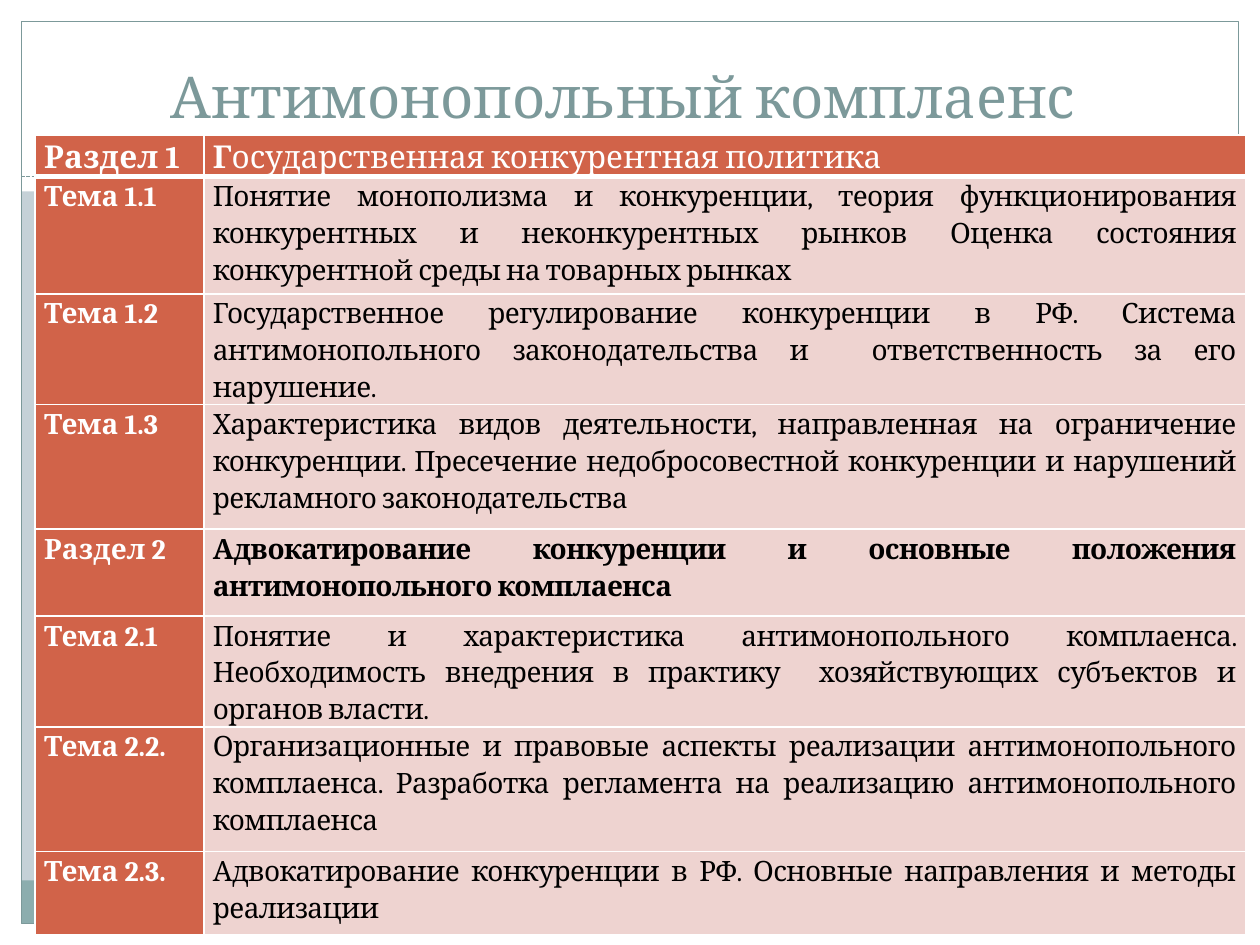
from lxml.etree import SubElement
from pptx import Presentation
from pptx.dml.color import RGBColor
from pptx.enum.dml import MSO_LINE
from pptx.enum.shapes import MSO_CONNECTOR, MSO_SHAPE
from pptx.enum.text import MSO_ANCHOR, MSO_AUTO_SIZE, PP_ALIGN
from pptx.oxml.ns import qn
from pptx.util import Cm, Pt

WHITE = RGBColor(0xFF, 0xFF, 0xFF)
BLACK = RGBColor(0, 0, 0)
MIST = RGBColor(0xC5, 0xD1, 0xD7)
TEAL = RGBColor(0x8C, 0xAD, 0xAE)
SLATE = RGBColor(0x7C, 0x99, 0x9A)
BRICK = RGBColor(0xD1, 0x63, 0x49)
ROSE = RGBColor(0xEE, 0xD3, 0xD0)
FONT = "Cambria"
WIDE, HIGH, EDGE = 25.4, 19.05, 0.43

TOPICS = [
    ("Раздел 1", "Государственная конкурентная политика", 0.84),
    ("Тема 1.1", "Понятие монополизма и конкуренции, теория функционирования "
     "конкурентных и неконкурентных рынков Оценка состояния конкурентной среды "
     "на товарных рынках", 2.36),
    ("Тема 1.2", "Государственное регулирование конкуренции в РФ. Система "
     "антимонопольного законодательства и  ответственность за его нарушение.", 1.4),
    ("Тема 1.3", "Характеристика видов деятельности, направленная на ограничение "
     "конкуренции. Пресечение недобросовестной конкуренции и нарушений "
     "рекламного законодательства", 2.51),
    ("Раздел 2", "Адвокатирование конкуренции и основные положения "
     "антимонопольного комплаенса", 1.75),
    ("Тема 2.1", "Понятие и характеристика антимонопольного комплаенса. "
     "Необходимость внедрения в практику  хозяйствующих субъектов и органов "
     "власти.", 1.68),
    ("Тема 2.2.", "Организационные и правовые аспекты реализации антимонопольного "
     "комплаенса. Разработка регламента на реализацию антимонопольного "
     "комплаенса", 2.51),
    ("Тема 2.3.", "Адвокатирование конкуренции в РФ. Основные направления и методы "
     "реализации", 1.68),
]


def add_box(slide, box, fill=None, line=None):
    """Add a plain rectangle with an optional fill and outline."""
    shape = slide.shapes.add_shape(MSO_SHAPE.RECTANGLE, *map(Cm, box))
    shape.shadow.inherit = False
    if fill is None:
        shape.fill.background()
    else:
        shape.fill.solid()
        shape.fill.fore_color.rgb = fill
    if line is None:
        shape.line.fill.background()
    else:
        shape.line.color.rgb = line
        shape.line.width = Pt(0.75)


def add_rule(slide, y):
    """Add the dashed rule under the title."""
    rule = slide.shapes.add_connector(
        MSO_CONNECTOR.STRAIGHT, Cm(EDGE), Cm(y), Cm(WIDE - EDGE), Cm(y))
    rule.line.color.rgb = SLATE
    rule.line.width = Pt(0.75)
    rule.line.dash_style = MSO_LINE.SQUARE_DOT
    SubElement(rule.element.spPr, qn("a:effectLst"))


def add_frame(slide):
    """Add the white margins, the foot bar and the thin frame."""
    for box in [(0, HIGH - EDGE, WIDE, EDGE), (0, 0, WIDE, 3.86),
                (0, 0, EDGE, HIGH), (WIDE - EDGE, 0, EDGE, HIGH)]:
        add_box(slide, box, WHITE)
    inner = WIDE - 2 * EDGE
    add_box(slide, (EDGE, 17.75, inner, 0.86), TEAL)
    add_box(slide, (EDGE, EDGE, inner, HIGH - 2 * EDGE), line=SLATE)
    add_rule(slide, 3.56)


def set_title(slide, text):
    """Place and format the title above the frame."""
    title = slide.shapes.title
    slide.shapes.element.append(title.element)
    title.left, title.top, title.width, title.height = map(
        Cm, (0.84, 0.64, 23.7, 2.11))
    frame = title.text_frame
    frame.text = text
    frame.auto_size = MSO_AUTO_SIZE.NONE
    frame.vertical_anchor = MSO_ANCHOR.BOTTOM
    para = frame.paragraphs[0]
    para.alignment = PP_ALIGN.CENTER
    para.font.name, para.font.size = FONT, Pt(33)
    para.font.color.rgb = SLATE


def set_edges(cell, widths):
    """Draw white cell borders, given widths in points by side."""
    props = cell._tc.get_or_add_tcPr()
    for side, width in zip("LRTB", widths):
        line = SubElement(props, qn(f"a:ln{side}"), w=str(Pt(width)))
        fill = SubElement(line, qn("a:solidFill"))
        SubElement(fill, qn("a:srgbClr"), val=str(WHITE))


def fill_cell(cell, parts, size, color, fill, widths):
    """Fill a cell with (text, bold) parts and return its paragraph."""
    set_edges(cell, widths)
    cell.fill.solid()
    cell.fill.fore_color.rgb = fill
    cell.margin_left = cell.margin_right = Cm(0.18)
    cell.margin_top = cell.margin_bottom = 0
    para = cell.text_frame.paragraphs[0]
    para.line_spacing = 1.15
    for text, bold in parts:
        run = para.add_run()
        run.text = text
        font = run.font
        font.name, font.size, font.bold = FONT, Pt(size), bold
        font.color.rgb = color
    return para


def add_topics(slide):
    """Add the table of sections and topics."""
    cols = (3.4, 21)
    high = sum(row[2] for row in TOPICS)
    table = slide.shapes.add_table(
        len(TOPICS), 2, Cm(0.71), Cm(2.72), Cm(sum(cols)), Cm(high)).table
    for col, width in zip(table.columns, cols):
        col.width = Cm(width)
    for i, (label, text, height) in enumerate(TOPICS):
        table.rows[i].height = Cm(height)
        head = i == 0
        size = 18 if head else 16
        widths = (1, 1, 3 if i == 1 else 1, 3 if head else 1)
        para = fill_cell(table.cell(i, 0), [(label, True)], size, WHITE, BRICK, widths)
        if label.startswith("Тема 2"):
            para.space_after = Pt(10)
        cell = table.cell(i, 1)
        if head:
            parts = [(text[0], True), (text[1:], False)]
            fill_cell(cell, parts, size, WHITE, BRICK, widths)
            continue
        parts = [(text, label.startswith("Раздел"))]
        para = fill_cell(cell, parts, size, BLACK, ROSE, widths)
        para.alignment = PP_ALIGN.JUSTIFY
        para.runs[0]._r.get_or_add_rPr().set("spc", "-30")


def main():
    """Build the slide and save it."""
    deck = Presentation()
    deck.slide_width, deck.slide_height = Cm(WIDE), Cm(HIGH)
    slide = deck.slides.add_slide(deck.slide_layouts[5])
    slide.background.fill.solid()
    slide.background.fill.fore_color.rgb = MIST
    add_frame(slide)
    set_title(slide, "Антимонопольный комплаенс ")
    add_topics(slide)
    deck.save("out.pptx")


if __name__ == "__main__":
    main()
